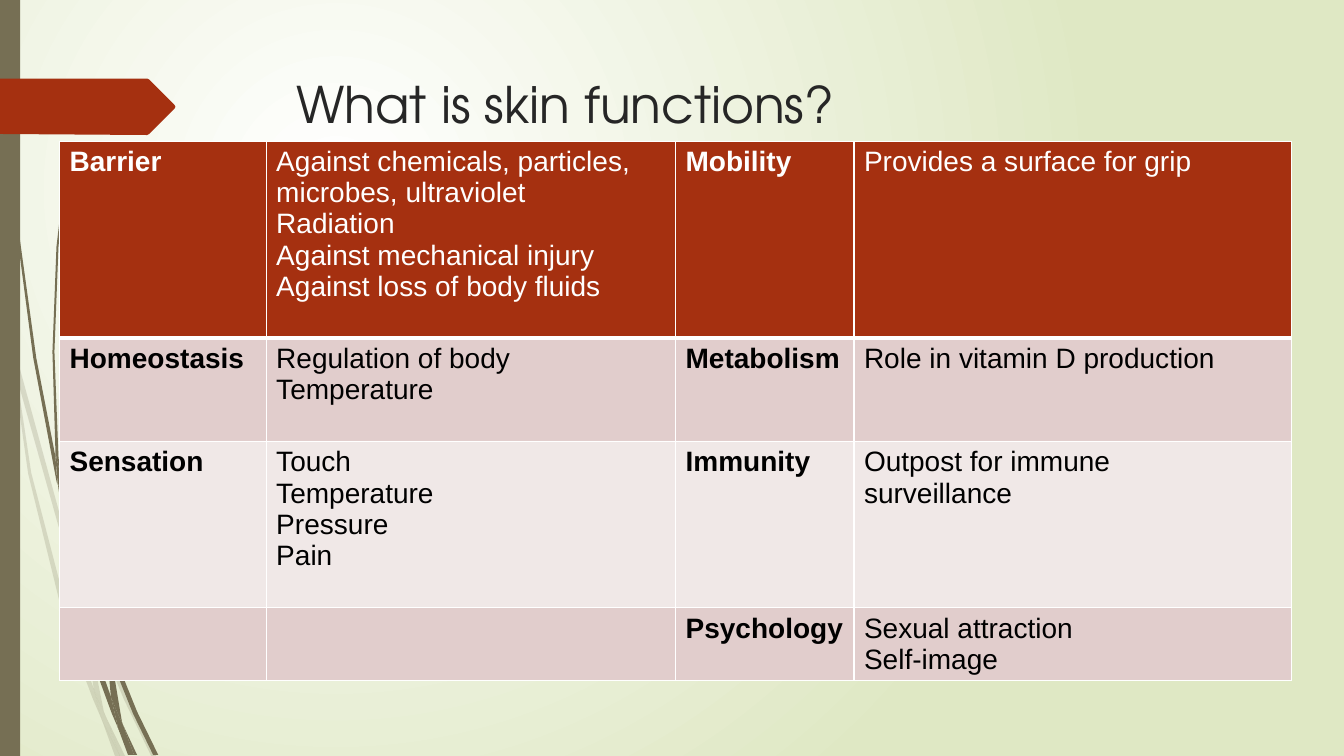
from lxml import etree
from pptx import Presentation
from pptx.dml.color import RGBColor
from pptx.enum.shapes import MSO_SHAPE
from pptx.enum.text import MSO_ANCHOR, PP_ALIGN
from pptx.oxml.ns import qn
from pptx.util import Inches, Pt

RECT = MSO_SHAPE.RECTANGLE
TOP = MSO_ANCHOR.TOP
LEFT = PP_ALIGN.LEFT

COLORS = {
    "white": "FFFFFF", "black": "000000", "title": "262626",
    "lime": "DFE8C4", "olive": "766F54", "rust": "A53010",
    "rose": "E1CDCC", "blush": "F0E8E7",
}

# Outlines of the grass blades, as points in inches
PALE = [
    [(.11, 3.5), (.09, 3.22), (0, 2.82), (0, 2.99), (.1, 3.44)],
    [(.58, 5.22), (.84, 5.99), (.85, 5.86), (.62, 5.2), (.14, 3.45), (.17, 3.76)],
    [(.92, 6.07), (.88, 5.96), (.88, 6.1), (1.23, 6.94), (1.5, 7.5), (1.55, 7.5),
     (1.27, 6.92)],
    [(1.19, 7.5), (1.24, 7.5), (1.05, 7.11)],
    [(.93, 6.83), (.7, 6.19), (.31, 4.69), (.17, 3.76), (.11, 3.5), (.28, 4.7),
     (.65, 6.21), (.92, 6.93), (1.01, 7.14), (.99, 7.07)],
    [(.84, 5.99), (.87, 6.46), (.93, 6.83), (.96, 6.92), (1.05, 7.11), (1.03, 7.06),
     (.91, 6.46), (.88, 6.1)],
    [(.88, 5.84), (1.1, 4.62), (1.6, 3.49), (2.29, 2.45), (2.68, 1.98), (2.9, 1.75),
     (3.12, 1.54), (3.12, 1.53), (2.89, 1.75), (2.68, 1.97), (2.28, 2.44),
     (1.58, 3.48), (1.07, 4.61), (.85, 5.84), (.88, 5.96)],
    [(1.01, 7.14), (1.14, 7.5), (1.19, 7.5)],
    [(.88, 6.08), (.88, 5.96), (.85, 5.86), (.84, 5.99)],
    [(.96, 6.92), (.93, 6.83), (.99, 7.07), (1.01, 7.14), (1.19, 7.5), (1.05, 7.11)],
]
DARK = [
    [(.07, 1.1), (.17, 2.33), (.33, 3.55), (.56, 4.77), (.57, 4.81), (.55, 4.53),
     (.36, 3.55), (.19, 2.32), (.08, 1.09), (.05, .48), (.04, 0), (.03, 0), (.04, .48)],
    [(.88, 5.92), (1.06, 6.45), (1.06, 6.31), (.93, 5.9), (.6, 4.72), (.64, 5.05)],
    [(1.13, 6.49), (1.1, 6.41), (1.11, 6.56), (1.32, 7.08), (1.52, 7.49), (1.57, 7.49),
     (1.36, 7.06)],
    [(1.1, 6.91), (.98, 6.57), (.72, 5.56), (.64, 5.05), (.57, 4.77), (.68, 5.57),
     (.93, 6.59), (1.11, 7.08), (1.17, 7.22), (1.16, 7.17)],
    [(.6, 4.72), (.58, 4.53), (.54, 3.49), (.58, 2.45), (.63, 1.93), (.7, 1.41),
     (.62, 1.93), (.56, 2.45), (.52, 3.49), (.55, 4.49)],
    [(1.33, 7.49), (1.36, 7.49), (1.22, 7.19)],
    [(.57, 4.77), (.64, 5.05), (.6, 4.72), (.55, 4.49), (.55, 4.53)],
    [(1.11, 6.33), (1.25, 5.52), (1.58, 4.76), (2.05, 4.06), (2.31, 3.74), (2.45, 3.59),
     (2.61, 3.44), (2.45, 3.58), (2.31, 3.73), (2.04, 4.05), (1.56, 4.74), (1.22, 5.51),
     (1.06, 6.31), (1.1, 6.41)],
    [(1.17, 7.22), (1.27, 7.49), (1.31, 7.49)],
    [(1.06, 6.45), (1.1, 6.91), (1.16, 7.06), (1.22, 7.19), (1.21, 7.16), (1.11, 6.56)],
    [(1.06, 6.45), (1.11, 6.56), (1.1, 6.41), (1.06, 6.31)],
    [(1.16, 7.06), (1.1, 6.91), (1.16, 7.17), (1.17, 7.22), (1.3, 7.49), (1.33, 7.49),
     (1.22, 7.19)],
]
ARROW = [(0, .78), (1.46, .78), (1.48, .79), (1.73, 1.04), (1.74, 1.06), (1.73, 1.08),
         (1.48, 1.33), (1.46, 1.34), (0, 1.33)]

COLS = [2.05, 4.06, 1.77, 4.34]
ROWS = [1.95, 1.03, 1.65, .72]
FILLS = ["rust", "rose", "blush", "rose"]
CELLS = [
    ["Barrier",
     "Against chemicals, particles,\nmicrobes, ultraviolet\nRadiation\n"
     "Against mechanical injury\nAgainst loss of body fluids",
     "Mobility", "Provides a surface for grip"],
    ["Homeostasis", "Regulation of body\nTemperature",
     "Metabolism", "Role in vitamin D production"],
    ["Sensation", "Touch\nTemperature\nPressure\nPain",
     "Immunity", "Outpost for immune\nsurveillance"],
    ["", "", "Psychology", "Sexual attraction\nSelf-image"],
]


def rgb(name):
    return RGBColor.from_string(COLORS[name])


def paint(shape, color, alpha=None):
    """Give a shape a plain fill, with alpha in percent."""
    shape.shadow.inherit = False
    shape.fill.solid()
    shape.fill.fore_color.rgb = rgb(color)
    shape.line.fill.background()
    if alpha:
        tone = shape._element.spPr.find(qn("a:solidFill"))[0]
        etree.SubElement(tone, qn("a:alpha"), val=str(alpha * 1000))


def add_form(slide, points, color, alpha=None):
    dots = [(Inches(x), Inches(y)) for x, y in points]
    form = slide.shapes.build_freeform(*dots[0])
    form.add_line_segments(dots[1:], close=True)
    paint(form.convert_to_shape(), color, alpha)


def set_back(slide):
    """Fill the background with a round glow at the upper left."""
    fill = slide.background.fill
    fill.gradient()
    for stop, name in zip(fill.gradient_stops, ("white", "lime")):
        stop.color.rgb = rgb(name)
    grad = slide._element.find(".//" + qn("a:gradFill"))
    grad.remove(grad.find(qn("a:lin")))
    glow = etree.SubElement(grad, qn("a:path"), path="circle")
    etree.SubElement(glow, qn("a:fillToRect"), l="50000", t="50000",
                     r="100000", b="100000")


def set_title(slide, text):
    title = slide.shapes.title
    title.left, title.top = Inches(2.84), Inches(.68)
    title.width, title.height = Inches(9.75), Inches(1.4)
    frame = title.text_frame
    frame.text = text
    frame.vertical_anchor = TOP
    para = frame.paragraphs[0]
    para.alignment = LEFT
    para.font.name, para.font.size = "TeX Gyre Adventor", Pt(36)
    para.font.color.rgb = rgb("title")


def set_edges(cell, head):
    """Draw white cell borders, thick below the head row."""
    props = cell._tc.get_or_add_tcPr()
    for side in "LRTB":
        width = 3 if head and side == "B" else 1
        line = etree.SubElement(props, qn("a:ln" + side), w=str(Pt(width)))
        fill = etree.SubElement(line, qn("a:solidFill"))
        etree.SubElement(fill, qn("a:srgbClr"), val=COLORS["white"])


def set_cell(cell, text, color, head, bold):
    set_edges(cell, head)
    cell.fill.solid()
    cell.fill.fore_color.rgb = rgb(color)
    cell.text = text
    for para in cell.text_frame.paragraphs:
        para.font.name, para.font.size = "Arial", Pt(20)
        para.font.bold = bold
        para.font.color.rgb = rgb("white" if head else "black")


def add_grid(slide):
    frame = slide.shapes.add_table(len(ROWS), len(COLS), Inches(.59), Inches(1.4),
                                   Inches(sum(COLS)), Inches(sum(ROWS)))
    table = frame.table
    table.horz_banding = False
    for col, width in zip(table.columns, COLS):
        col.width = Inches(width)
    for r, texts in enumerate(CELLS):
        table.rows[r].height = Inches(ROWS[r])
        for c, text in enumerate(texts):
            set_cell(table.cell(r, c), text, FILLS[r], r == 0, c % 2 == 0)


def main():
    prs = Presentation()
    prs.slide_width, prs.slide_height = Inches(13.33), Inches(7.5)
    slide = prs.slides.add_slide(prs.slide_layouts[5])
    set_back(slide)
    for blade in PALE:
        add_form(slide, blade, "olive", 20)
    for blade in DARK:
        add_form(slide, blade, "olive")
    bar = slide.shapes.add_shape(RECT, 0, 0, Inches(.2), Inches(7.5))
    paint(bar, "olive")
    add_form(slide, ARROW, "rust")
    set_title(slide, "What is skin functions?")
    add_grid(slide)
    prs.save("out.pptx")


if __name__ == "__main__":
    main()
